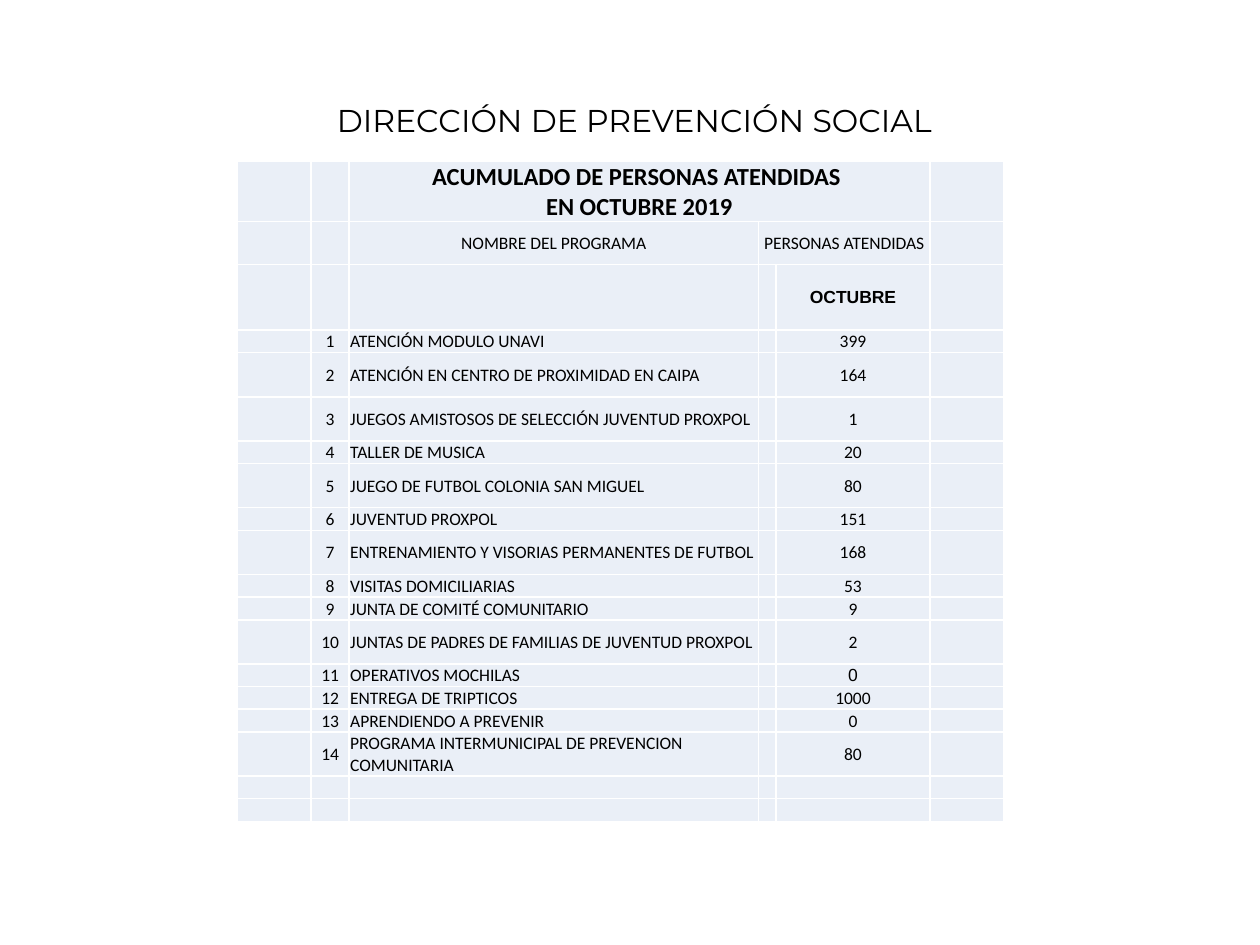
from lxml import etree
from pptx import Presentation
from pptx.dml.color import RGBColor
from pptx.enum.text import MSO_ANCHOR, MSO_AUTO_SIZE, PP_ALIGN
from pptx.oxml.ns import qn
from pptx.util import Inches, Pt

CENTER, LEFT = PP_ALIGN.CENTER, PP_ALIGN.LEFT
MIDDLE = MSO_ANCHOR.MIDDLE
GROW = MSO_AUTO_SIZE.SHAPE_TO_FIT_TEXT

COLORS = {"text": "000000", "cell": "EAEFF7", "border": "FFFFFF"}
BODY_SIZE = 10

COLUMN_WIDTHS = [0.59, 0.3, 3.25, 0.14, 1.22, 0.59]
HEADER_HEIGHTS = [0.48, 0.34, 0.52]
LINE_HEIGHTS = {1: 0.18, 2: 0.35}
EMPTY_ROWS = 2
NUMBER, NAME, GAP, VALUE = 1, 2, 3, 4  # columns that hold content

# Program, people served, row height in lines
PROGRAMS = [
    ("ATENCIÓN MODULO UNAVI", 399, 1),
    ("ATENCIÓN EN CENTRO DE PROXIMIDAD EN CAIPA", 164, 2),
    ("JUEGOS AMISTOSOS DE SELECCIÓN JUVENTUD PROXPOL", 1, 2),
    ("TALLER DE MUSICA", 20, 1),
    ("JUEGO DE FUTBOL COLONIA SAN MIGUEL", 80, 2),
    ("JUVENTUD PROXPOL", 151, 1),
    ("ENTRENAMIENTO Y VISORIAS PERMANENTES DE FUTBOL", 168, 2),
    ("VISITAS DOMICILIARIAS", 53, 1),
    ("JUNTA DE COMITÉ COMUNITARIO", 9, 1),
    ("JUNTAS DE PADRES DE FAMILIAS DE JUVENTUD PROXPOL", 2, 2),
    ("OPERATIVOS MOCHILAS", 0, 1),
    ("ENTREGA DE TRIPTICOS", 1000, 1),
    ("APRENDIENDO A PREVENIR", 0, 1),
    ("PROGRAMA INTERMUNICIPAL DE PREVENCION COMUNITARIA", 80, 2),
]
ARIAL_VALUE_PROGRAM = "OPERATIVOS MOCHILAS"


def write_text(text_frame, *lines, size=BODY_SIZE, font="Calibri", bold=False, align=CENTER):
    """Write one paragraph per line with a shared format."""
    for index, line in enumerate(lines):
        paragraph = text_frame.add_paragraph() if index else text_frame.paragraphs[0]
        paragraph.alignment = align
        run = paragraph.add_run()
        run.text = line
        run.font.name = font
        run.font.size = Pt(size)
        run.font.bold = bold
        run.font.color.rgb = RGBColor.from_string(COLORS["text"])


def add_title(slide, text):
    box = slide.shapes.add_textbox(Inches(1.61), Inches(0.75), Inches(6.85), Inches(0.4))
    box.text_frame.word_wrap = True
    box.text_frame.auto_size = GROW
    write_text(box.text_frame, text, size=18, font="Montserrat")


def add_borders(cell, width=1):
    properties = cell._tc.get_or_add_tcPr()
    for index, side in enumerate(("a:lnL", "a:lnR", "a:lnT", "a:lnB")):
        line = etree.Element(qn(side), w=str(Pt(width)))
        fill = etree.SubElement(line, qn("a:solidFill"))
        etree.SubElement(fill, qn("a:srgbClr"), val=COLORS["border"])
        properties.insert(index, line)


def format_cell(cell):
    cell.margin_left = cell.margin_right = cell.margin_top = Inches(0.01)
    cell.margin_bottom = 0
    cell.vertical_anchor = MIDDLE
    cell.fill.solid()
    cell.fill.fore_color.rgb = RGBColor.from_string(COLORS["cell"])
    add_borders(cell)
    # Small text size in empty cells keeps the low rows from growing
    if not cell.text_frame.text:
        paragraph = cell.text_frame.paragraphs[0]._p
        etree.SubElement(paragraph, qn("a:endParaRPr"), sz=str(BODY_SIZE * 100))


def add_grid(slide):
    heights = HEADER_HEIGHTS + [LINE_HEIGHTS[lines] for _, _, lines in PROGRAMS]
    heights += [LINE_HEIGHTS[1]] * EMPTY_ROWS
    frame = slide.shapes.add_table(
        len(heights), len(COLUMN_WIDTHS), Inches(1.88), Inches(1.28),
        Inches(sum(COLUMN_WIDTHS)), Inches(sum(heights)))
    table = frame.table
    table.first_row = table.horz_banding = False
    for column, width in zip(table.columns, COLUMN_WIDTHS):
        column.width = Inches(width)
    for row, height in zip(table.rows, heights):
        row.height = Inches(height)
    return table


def fill_headers(table):
    table.cell(0, NAME).merge(table.cell(0, VALUE))
    table.cell(1, GAP).merge(table.cell(1, VALUE))
    write_text(table.cell(0, NAME).text_frame, "ACUMULADO DE PERSONAS ATENDIDAS ",
               "EN OCTUBRE 2019", size=14, bold=True)
    write_text(table.cell(1, NAME).text_frame, "NOMBRE DEL PROGRAMA")
    write_text(table.cell(1, GAP).text_frame, "PERSONAS ATENDIDAS")
    write_text(table.cell(2, VALUE).text_frame, "OCTUBRE", font="Arial", bold=True)


def fill_programs(table):
    for number, (name, value, _) in enumerate(PROGRAMS, start=1):
        row = len(HEADER_HEIGHTS) + number - 1
        value_font = "Arial" if name == ARIAL_VALUE_PROGRAM else "Calibri"
        write_text(table.cell(row, NUMBER).text_frame, str(number))
        write_text(table.cell(row, NAME).text_frame, name, align=LEFT)
        write_text(table.cell(row, VALUE).text_frame, str(value), font=value_font)


def main():
    presentation = Presentation()
    presentation.slide_width, presentation.slide_height = Inches(10), Inches(7.5)
    slide = presentation.slides.add_slide(presentation.slide_layouts[6])

    # Heading
    add_title(slide, "DIRECCIÓN DE PREVENCIÓN SOCIAL")

    # Table of people served per program
    table = add_grid(slide)
    fill_headers(table)
    fill_programs(table)
    for cell in table.iter_cells():
        format_cell(cell)

    presentation.save("out.pptx")


if __name__ == "__main__":
    main()
